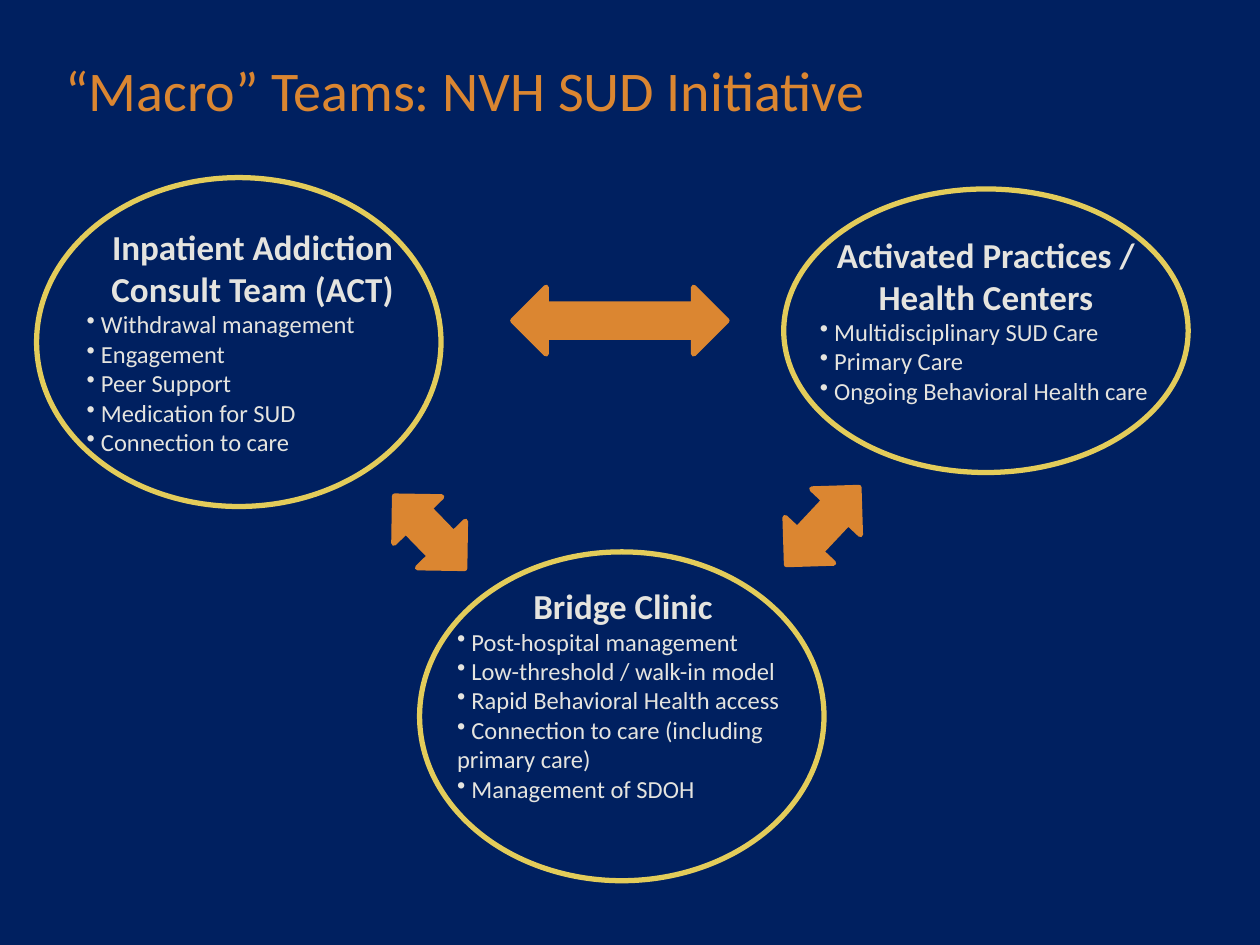
from pptx import Presentation
from pptx.dml.color import RGBColor
from pptx.enum.shapes import MSO_SHAPE
from pptx.enum.text import MSO_ANCHOR, PP_ALIGN
from pptx.oxml.ns import qn
from pptx.util import Inches, Pt
from lxml import etree

NAVY = RGBColor(0x00, 0x20, 0x60)
ORANGE = RGBColor(0xDB, 0x86, 0x31)
YELLOW = RGBColor(0xE3, 0xCC, 0x5A)
PALE = RGBColor(0xE5, 0xE4, 0xDF)
OVAL = MSO_SHAPE.OVAL
DOUBLE_ARROW = MSO_SHAPE.LEFT_RIGHT_ARROW
CENTER = PP_ALIGN.CENTER
MIDDLE = MSO_ANCHOR.MIDDLE
FONT = "Calibri"
LINE_WIDTH = Pt(3)
OVAL_WIDTH = 3.21
TEXT_WIDTH = 2.83

# Oval box, offset of the text inside it, text height, heading, bullet items
TEAMS = [
    ((0.29, 1.41, OVAL_WIDTH, 2.61), (0.3, 0.33), 1.95,
     "Inpatient Addiction Consult Team (ACT)",
     ["Withdrawal management", "Engagement", "Peer Support",
      "Medication for SUD", "Connection to care"]),
    ((3.33, 4.38, OVAL_WIDTH, 2.61), (0.2, 0.21), 1.85,
     "Bridge Clinic",
     ["Post-hospital management", "Low-threshold / walk-in model",
      "Rapid Behavioral Health access",
      "Connection to care (including primary care)", "Management of SDOH"]),
    ((6.22, 1.5, OVAL_WIDTH, 2.25), (0.19, 0.3), 1.48,
     "Activated Practices / Health Centers",
     ["Multidisciplinary SUD Care", "Primary Care",
      "Ongoing Behavioral Health care"]),
]

# Arrow box and rotation in degrees
ARROWS = [
    ((4.07, 2.28, 1.7, 0.53), 0),
    ((6.11, 3.91, 0.84, 0.53), 313.2),
    ((3.01, 3.96, 0.8, 0.53), 45.9),
]


def add_span(para, text, size, color, bold=False):
    span = para.add_run()
    span.text = text
    span.font.name = FONT
    span.font.size = Pt(size)
    span.font.bold = bold
    span.font.color.rgb = color


def add_text_frame(page, box):
    frame = page.shapes.add_textbox(*map(Inches, box)).text_frame
    frame.word_wrap = True
    return frame


def add_outlined(page, preset, box, line_color):
    shape = page.shapes.add_shape(preset, *map(Inches, box))
    shape.shadow.inherit = False
    shape.fill.background()
    shape.line.color.rgb = line_color
    shape.line.width = LINE_WIDTH
    return shape


def add_title(page, box, text):
    frame = add_text_frame(page, box)
    frame.vertical_anchor = MIDDLE
    add_span(frame.paragraphs[0], text, 32, ORANGE)


def add_team(page, box, offset, text_height, heading, items):
    left, top = box[0] + offset[0], box[1] + offset[1]
    frame = add_text_frame(page, (left, top, TEXT_WIDTH, text_height))
    para = frame.paragraphs[0]
    para.alignment = CENTER
    add_span(para, heading, 20, PALE, bold=True)
    for item in items:
        para = frame.add_paragraph()
        bullet = etree.SubElement(para._p.get_or_add_pPr(), qn("a:buChar"))
        bullet.set("char", "•")
        add_span(para, " " + item, 14, PALE)
    add_outlined(page, OVAL, box, YELLOW)


def add_arrow(page, box, rotation):
    arrow = add_outlined(page, DOUBLE_ARROW, box, ORANGE)
    arrow.fill.solid()
    arrow.fill.fore_color.rgb = ORANGE
    arrow.rotation = rotation


def main():
    deck = Presentation()
    deck.slide_width, deck.slide_height = Inches(10), Inches(7.5)
    page = deck.slides.add_slide(deck.slide_layouts[6])
    page.background.fill.solid()
    page.background.fill.fore_color.rgb = NAVY

    add_title(page, (0.42, 0.33, 9.27, 0.75), "“Macro” Teams: NVH SUD Initiative")
    for team in TEAMS:
        add_team(page, *team)
    for box, rotation in ARROWS:
        add_arrow(page, box, rotation)

    deck.save("out.pptx")


if __name__ == "__main__":
    main()
